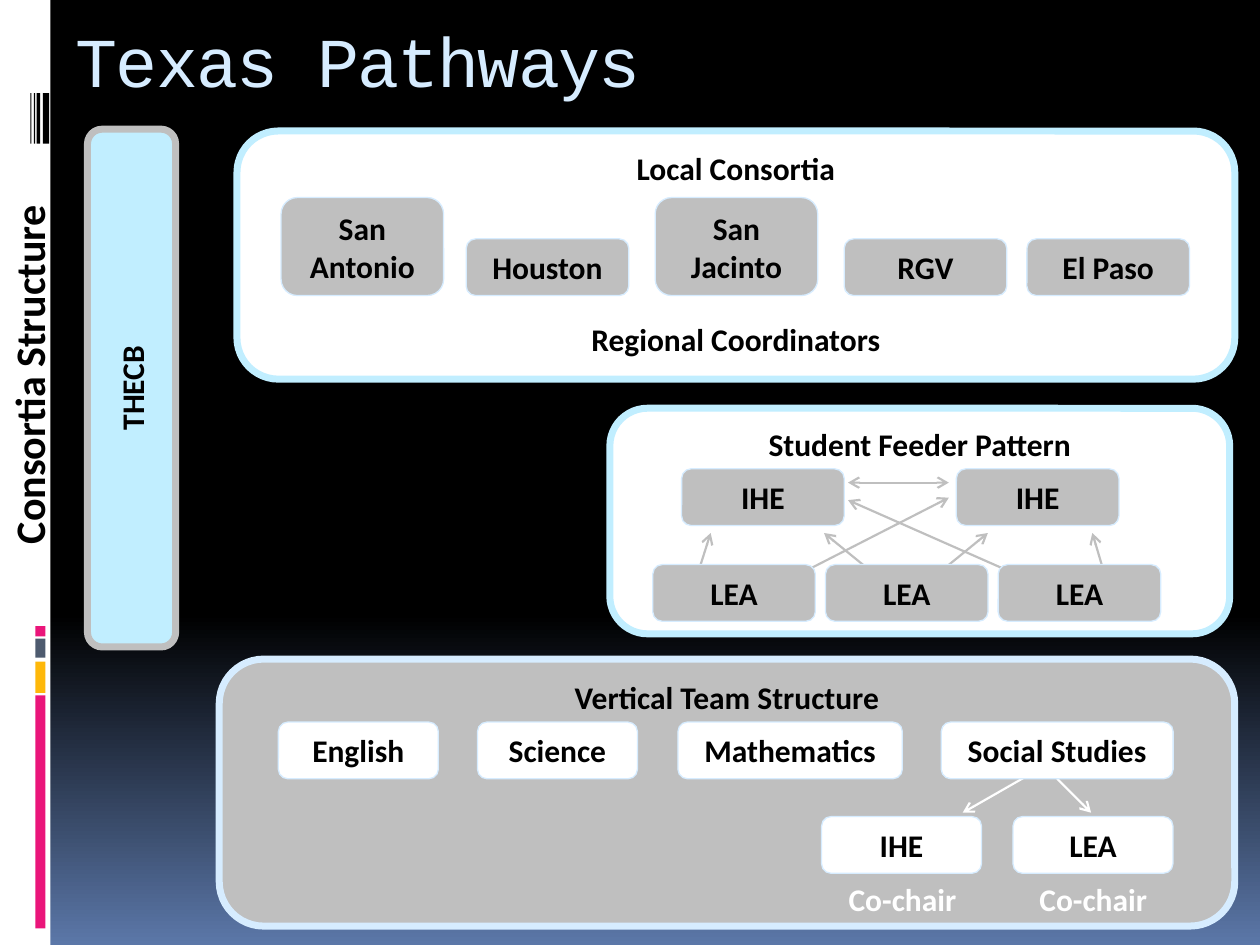
from collections import namedtuple
from dataclasses import dataclass

from lxml.etree import SubElement
from pptx import Presentation
from pptx.dml.color import RGBColor
from pptx.enum.shapes import MSO_CONNECTOR, MSO_SHAPE
from pptx.enum.text import MSO_ANCHOR, PP_ALIGN
from pptx.oxml.ns import qn
from pptx.util import Pt

Box = namedtuple("Box", "left top wide high")


@dataclass(frozen=True)
class Theme:
    """Colours, fonts and sizes of the deck."""
    black: str = "000000"
    white: str = "FFFFFF"
    grey: str = "BFBFBF"
    ice: str = "C1EEFF"
    pale: str = "D6ECFF"
    pink: str = "EA157A"
    gold: str = "FEB80A"
    slate: str = "4E5B6F"
    blue: str = "5B77A8"
    body: str = "Calibri"
    head: str = "Courier New"
    small: float = 18
    mid: float = 24
    large: float = 40


THEME = Theme()


def tint(code):
    """Turn a hex code into a colour."""
    return RGBColor.from_string(code)


def write(frame, text, size=THEME.small, font=THEME.body, color=THEME.black,
          bold=True, align=PP_ALIGN.CENTER, anchor=MSO_ANCHOR.MIDDLE, gap=0, track=0):
    """Fill a text frame, one paragraph to a line."""
    frame.word_wrap = True
    frame.vertical_anchor = anchor
    for side in ("left", "right"):
        setattr(frame, f"margin_{side}", Pt(7.2))
    for side in ("top", "bottom"):
        setattr(frame, f"margin_{side}", Pt(3.6))
    lines = text.split("\n")
    for spot, line in enumerate(lines):
        para = frame.add_paragraph() if spot else frame.paragraphs[0]
        para.alignment = align
        para.space_before = Pt(0)
        para.space_after = Pt(gap if spot < len(lines) - 1 else 0)
        run = para.add_run()
        run.text = line
        run.font.size, run.font.name, run.font.bold = Pt(size), font, bold
        run.font.color.rgb = tint(color)
        if track:
            run._r.get_or_add_rPr().set("spc", str(int(track * 100)))


def card(shapes, box, text="", fill=None, line=None, weight=0.75,
         kind=MSO_SHAPE.ROUNDED_RECTANGLE, **style):
    """Place a filled or bare shape with text."""
    shape = shapes.add_shape(kind, *map(Pt, box))
    shape.shadow.inherit = False
    if fill:
        shape.fill.solid()
        shape.fill.fore_color.rgb = tint(fill)
    else:
        shape.fill.background()
    if line:
        shape.line.color.rgb = tint(line)
        shape.line.width = Pt(weight)
    else:
        shape.line.fill.background()
    if text:
        write(shape.text_frame, text, **style)
    return shape


def upright(shapes, box, text, **style):
    """Place a card that reads upward inside a tall box."""
    left = box.left + (box.wide - box.high) / 2
    top = box.top + (box.high - box.wide) / 2
    card(shapes, Box(left, top, box.high, box.wide), text, **style).rotation = 270


def arrow(shapes, box, start, end, color, both=False):
    """Draw an arrow between two points of a box."""
    spots = (box.left + start[0], box.top + start[1], box.left + end[0], box.top + end[1])
    link = shapes.add_connector(MSO_CONNECTOR.STRAIGHT, *map(Pt, spots))
    link.line.color.rgb = tint(color)
    link.line.width = Pt(1.25)
    edge = link.line._get_or_add_ln()
    for tip in ("a:headEnd", "a:tailEnd") if both else ("a:tailEnd",):
        SubElement(edge, qn(tip)).set("type", "arrow")
    SubElement(link._element.spPr, qn("a:effectLst"))


def inner(box, left, top, wide, high):
    """Shift a box from panel to slide space."""
    return Box(box.left + left, box.top + top, wide, high)


def margin(shapes, box):
    """Draw the white strip with its bars and label."""
    card(shapes, box, fill=THEME.white, kind=MSO_SHAPE.RECTANGLE)
    blocks = ((397.4, 133.2, THEME.pink), (378, 18, THEME.gold),
              (365, 10.8, THEME.slate), (357.8, 5.8, THEME.pink))
    for top, high, fill in blocks:
        card(shapes, inner(box, 20.2, top, 5.8, high), fill=fill, kind=MSO_SHAPE.RECTANGLE)
    for left, wide in ((24.5, 3.6), (20.9, 2.16), (19.4, 0.72), (17.3, 0.72)):
        card(shapes, inner(box, left, 53.3, wide, 28.8), fill=THEME.black,
             kind=MSO_SHAPE.RECTANGLE)
    upright(shapes, inner(box, -4, 108.4, 40.3, 234), "Consortia Structure",
            size=THEME.mid, align=PP_ALIGN.RIGHT)


def local(shapes, box):
    """Draw the local consortia panel."""
    card(shapes, box, "Local Consortia\nRegional Coordinators", fill=THEME.white,
         line=THEME.ice, weight=4, anchor=MSO_ANCHOR.TOP, gap=76)
    towns = (("San Antonio", 25.2, 56), ("Houston", 131, 32.4), ("San Jacinto", 239, 56),
             ("RGV", 347, 32.4), ("El Paso", 451.4, 32.4))
    for name, left, high in towns:
        card(shapes, inner(box, left, 94 - high, 92.9, high), name,
             fill=THEME.grey, line=THEME.pale)


def feeder(shapes, box):
    """Draw the student feeder panel."""
    card(shapes, box, "Student Feeder Pattern", fill=THEME.white, line=THEME.ice,
         weight=4, anchor=MSO_ANCHOR.TOP)
    links = (((47.5, 103), (57.6, 71.3)), ((106.5, 95.7), (193.7, 51.1)),
             ((285.1, 103), (275.7, 71.3)), ((234, 95.7), (136.1, 52.5)),
             ((177.1, 103), (216, 71.3)), ((161.3, 103), (122.4, 71.3)))
    for start, end in links:
        arrow(shapes, box, start, end, THEME.grey)
    arrow(shapes, box, (136.1, 42.5), (193.7, 42.5), THEME.grey, both=True)
    rows = (("IHE", 2, 41, 157, 34.6), ("LEA", 3, 24.5, 98.7, 89.3))
    for name, count, left, step, top in rows:
        for spot in range(count):
            card(shapes, inner(box, left + spot * step, top, 92.9, 32.4), name,
                 fill=THEME.grey, line=THEME.pale)


def teams(shapes, box):
    """Draw the vertical team panel."""
    card(shapes, box, "Vertical Team Structure", fill=THEME.grey, line=THEME.pale,
         weight=4, anchor=MSO_ANCHOR.TOP)
    for start, end in (((478.8, 68.4), (498.2, 87.8)), ((475.2, 59), (424.8, 87.8))):
        arrow(shapes, box, start, end, THEME.white)
    cards = (("English", 33.8, 36, 91.4), ("Science", 147.6, 36, 91.4),
             ("Mathematics", 262.1, 36, 128.2), ("Social Studies", 412.6, 36, 132.5),
             ("IHE", 344.2, 90, 91.4), ("LEA", 453.6, 90, 91.4))
    for name, left, top, wide in cards:
        card(shapes, inner(box, left, top, wide, 32.4), name,
             fill=THEME.white, line=THEME.pale)
    for left in (342.2, 451.2):
        card(shapes, inner(box, left, 121, 96.5, 32.4), "Co-chair", color=THEME.white)


def heading(title, box):
    """Move and fill the title placeholder."""
    title.left, title.top, title.width, title.height = map(Pt, box)
    write(title.text_frame, "Texas Pathways", size=THEME.large, font=THEME.head,
          color=THEME.pale, bold=False, align=PP_ALIGN.LEFT, track=-1)
    title.text_frame.margin_bottom = Pt(8)


def backdrop(slide):
    """Fade the slide from black to blue."""
    fill = slide.background.fill
    fill.gradient()
    fill.gradient_angle = 270
    for stop, place, code in zip(fill.gradient_stops, (0.65, 1), (THEME.black, THEME.blue)):
        stop.position = place
        stop.color.rgb = tint(code)


def main():
    """Build and save the deck."""
    deck = Presentation()
    deck.slide_width, deck.slide_height = Pt(720), Pt(540)
    slide = deck.slides.add_slide(deck.slide_layouts[5])
    backdrop(slide)
    margin(slide.shapes, Box(0, 0, 28.8, 540))
    heading(slide.shapes.title, Box(36, 0, 612, 72))
    upright(slide.shapes, Box(50, 73.8, 50.4, 295.9), "THECB", fill=THEME.ice,
            line=THEME.grey, weight=4)
    panels = ((local, Box(135.4, 74.9, 570.2, 141.8)),
              (teams, Box(125.3, 376.6, 580.3, 152.6)),
              (feeder, Box(348.5, 233.3, 354.2, 128.9)))
    for draw, box in panels:
        draw(slide.shapes.add_group_shape().shapes, box)
    deck.save("out.pptx")


if __name__ == "__main__":
    main()
